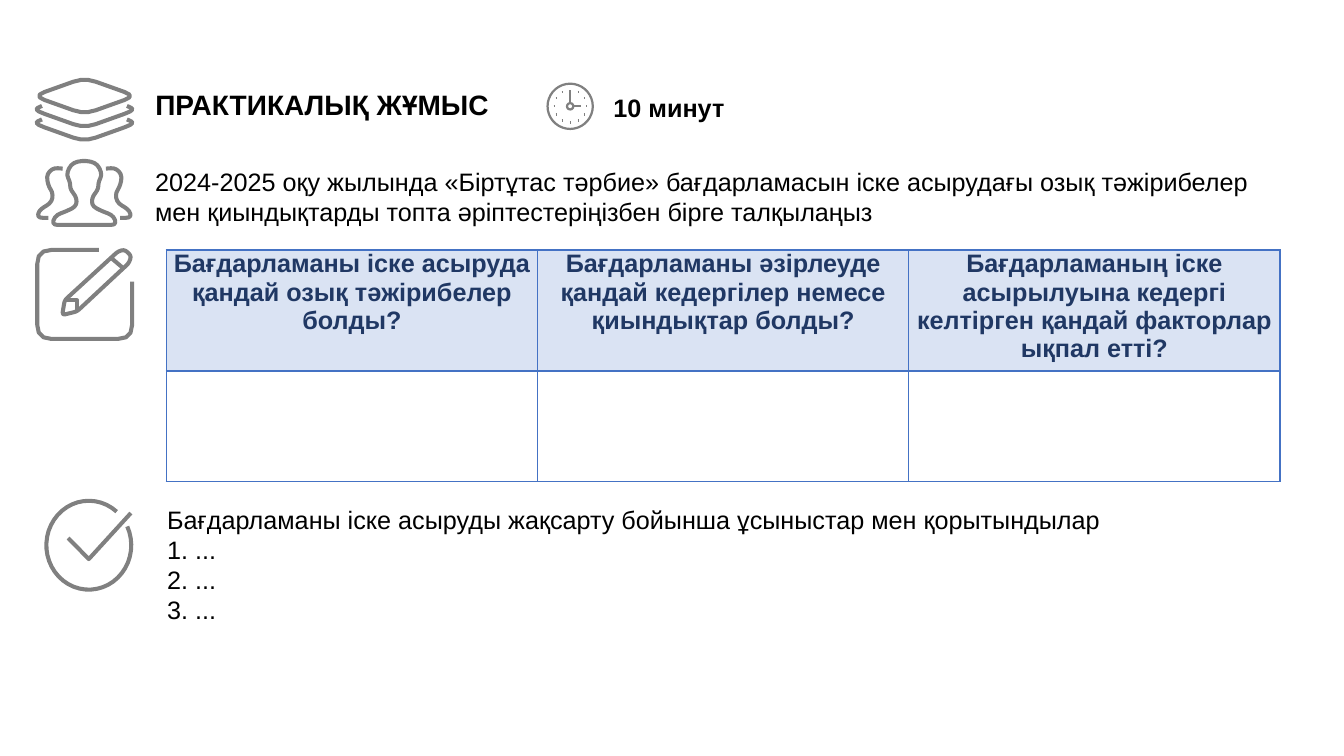
from math import cos, sin, radians
from lxml.etree import SubElement
from pptx import Presentation
from pptx.dml.color import RGBColor
from pptx.enum.text import MSO_ANCHOR, MSO_AUTO_SIZE, PP_ALIGN
from pptx.oxml.ns import qn
from pptx.util import Cm, Pt

GRAY, BLACK, WHITE = "808080", "000000", "FFFFFF"
NAVY, PALE, BLUE = "203864", "DAE3F3", "4472C4"
HEADS = [
    "Бағдарламаны іске асыруда қандай озық тәжірибелер болды?",
    "Бағдарламаны әзірлеуде қандай кедергілер немесе қиындықтар болды?",
    "Бағдарламаның іске асырылуына кедергі келтірген қандай факторлар ықпал етті?",
]


def color(code):
    return RGBColor.from_string(code)


# Text
def style(par, size=18, bold=False, code=BLACK):
    for run in par.runs:
        font = run.font
        font.name, font.size, font.bold = "Arial", Pt(size), bold
        font.color.rgb = color(code)


def write(shape, box, text, size=18, bold=False):
    shape.left, shape.top, shape.width, shape.height = map(Cm, box)
    frame = shape.text_frame
    frame.text = text
    frame.word_wrap = True
    frame.auto_size = MSO_AUTO_SIZE.NONE
    frame.vertical_anchor = MSO_ANCHOR.TOP
    for par in frame.paragraphs:
        par.alignment = PP_ALIGN.LEFT
        par.space_before = Pt(0)
        style(par, size, bold)


def label(slide, box, text, bold=False):
    write(slide.shapes.add_textbox(*map(Cm, box)), box, text, 18, bold)


# Icon strokes
def soften(points, bend, closed):
    """Round each corner with a short quadratic curve."""
    result, last = [], len(points) - 1
    for i, (x, y) in enumerate(points):
        if not bend or (not closed and i in (0, last)):
            result.append((x, y))
            continue
        ends = []
        for px, py in (points[i - 1], points[(i + 1) % len(points)]):
            gap = ((px - x) ** 2 + (py - y) ** 2) ** 0.5
            part = min(bend / gap, 0.5)
            ends.append((x + (px - x) * part, y + (py - y) * part))
        (ax, ay), (bx, by) = ends
        for t in (0, 0.33, 0.67, 1):
            u = 1 - t
            result.append((u * u * ax + 2 * u * t * x + t * t * bx,
                           u * u * ay + 2 * u * t * y + t * t * by))
    return result


def draw(slide, left, top, parts, width=2.9):
    """Draw all parts (points, bend, closed) as one outline."""
    maker = None
    for points, bend, closed in parts:
        dots = [(Cm(left + x), Cm(top + y)) for x, y in soften(points, bend, closed)]
        if maker:
            maker.move_to(*dots[0])
        else:
            maker = slide.shapes.build_freeform(*dots[0])
        maker.add_line_segments(dots[1:], close=closed)
    shape = maker.convert_to_shape()
    shape.shadow.inherit = False
    shape.fill.background()
    shape.line.color.rgb = color(GRAY)
    shape.line.width = Pt(width)


def ring(x, y, wide, high, angles):
    return [(x + wide * cos(radians(a)), y + high * sin(radians(a))) for a in angles]


def flip(points):
    return [(2.47 - x, y) for x, y in points]


# Icons
def layers(slide, left, top):
    sheet = [(-0.05, 0.46), (1.24, 0), (2.53, 0.46), (1.24, 0.92)]
    draw(slide, left, top, [(sheet, 0.3, True)])
    edge = [(0.17, 0.71), (-0.05, 0.81), (1.24, 1.27), (2.53, 0.81), (2.31, 0.71)]
    for drop in (0, 0.34):
        draw(slide, left, top + drop, [(edge, 0.3, False)])


def people(slide, left, top):
    side = [(0.69, 0.26), (0.45, 0.24), (0.28, 0.42), (0.33, 0.7), (0.45, 0.88),
            (0.41, 1.12), (0.1, 1.3), (0.05, 1.5), (0.33, 1.5)]
    half = [(1.23, 0.05), (0.92, 0.12), (0.78, 0.4), (0.88, 0.6), (0.88, 0.78),
            (1.04, 0.98), (1.04, 1.2), (0.82, 1.32), (0.5, 1.44), (0.42, 1.68)]
    draw(slide, left, top, [(side, 0.15, False), (flip(side), 0.15, False),
                            (half + flip(half[:0:-1]), 0.15, True)])


def pencil(slide, left, top):
    frame = [(1.6, 0.05), (0.05, 0.05), (0.05, 2.29), (2.44, 2.29), (2.44, 0.85)]
    body = [(0.68, 1.69), (0.74, 1.32), (2.08, 0.09), (2.25, 0.04),
            (2.42, 0.2), (2.36, 0.38), (1.05, 1.6)]
    band = [(1.9, 0.24), (2.23, 0.52)]
    nib = [(0.74, 1.32), (1.05, 1.32), (1.05, 1.6)]
    draw(slide, left, top, [(frame, 0.35, False), (body, 0.08, True),
                            (band, 0, False), (nib, 0, False)])


def check(slide, left, top):
    tick = [(0.83, 0.99), (1.35, 1.52), (2.41, 0.36)]
    arc = ring(1.35, 1.17, 1.07, 1.12, range(-25, 314, 8))
    draw(slide, left, top, [(arc, 0, False), (tick, 0, False)])


def clock(slide, left, top):
    mid = 0.6
    parts = [(ring(mid, mid, 0.57, 0.57, range(0, 360, 10)), 0, True),
             (ring(mid, mid, 0.08, 0.08, range(0, 360, 30)), 0, True),
             ([(mid, mid - 0.08), (mid, mid - 0.42)], 0, False),
             ([(mid + 0.08, mid), (mid + 0.27, mid)], 0, False)]
    for x, y in ring(mid, mid, 0.41, 0.41, range(-60, 270, 30)):
        parts.append(([(x - 0.01, y), (x + 0.01, y)], 0, False))
    draw(slide, left, top, parts, 1.6)


# Regions
def header(slide, left, top):
    layers(slide, left, top)
    write(slide.shapes.title, (left + 2.77, top + 0.12, 9, 1.12),
          "ПРАКТИКАЛЫҚ ЖҰМЫС", 20, True)
    clock(slide, left + 12.88, top + 0.12)
    label(slide, (left + 14.32, top + 0.25, 17.07, 1.02), "10 минут", True)


def task(slide, left, top):
    people(slide, left, top)
    label(slide, (left + 2.77, top + 0.07, 28.07, 1.8),
          "2024-2025 оқу жылында «Біртұтас тәрбие» бағдарламасын іске асырудағы озық "
          "тәжірибелер мен қиындықтарды топта әріптестеріңізбен бірге талқылаңыз")


def border(cell, sides):
    props = cell._tc.get_or_add_tcPr()
    for i, (side, width) in enumerate(sides.items()):
        line = SubElement(props, qn("a:" + side), w=str(Pt(width)))
        fill = SubElement(line, qn("a:solidFill"))
        SubElement(fill, qn("a:srgbClr"), val=BLUE)
        props.remove(line)
        props.insert(i, line)  # borders stand before the fill


def grid(slide, left, top):
    pencil(slide, left, top)
    box = (left + 3.3, top + 0.05, 28.07, 5.83)
    table = slide.shapes.add_table(2, len(HEADS), *map(Cm, box)).table
    for column in table.columns:
        column.width = Cm(box[2] / len(HEADS))
    for row, height in zip(table.rows, (3.05, 2.78)):
        row.height = Cm(height)
    for i, head in enumerate(HEADS):
        for row, code in enumerate((PALE, WHITE)):
            cell = table.cell(row, i)
            cell.fill.solid()
            cell.fill.fore_color.rgb = color(code)
            cell.margin_left = cell.margin_right = Cm(0.18)
            cell.margin_top = cell.margin_bottom = 0
            border(cell, {"lnL": 1, "lnR": 1, "lnT": 1 + row, "lnB": 2 - row})
        frame = table.cell(0, i).text_frame
        frame.text = head
        frame.paragraphs[0].alignment = PP_ALIGN.CENTER
        style(frame.paragraphs[0], 18, True, NAVY)


def summary(slide, left, top):
    check(slide, left, top)
    body = slide.placeholders[1]
    write(body, (left + 3.07, top, 27.05, 3.33),
          "Бағдарламаны іске асыруды жақсарту бойынша ұсыныстар мен қорытындылар\n"
          "1. ...\n2. ...\n3. ...")
    for par in body.text_frame.paragraphs:
        props = par._p.get_or_add_pPr()
        props.set("marL", "0")
        props.set("indent", "0")
        SubElement(props, qn("a:buNone"))


def main():
    deck = Presentation()
    deck.slide_width, deck.slide_height = Cm(33.87), Cm(19.05)
    slide = deck.slides.add_slide(deck.slide_layouts[1])
    header(slide, 0.89, 1.96)
    task(slide, 0.89, 3.99)
    grid(slide, 0.89, 6.25)
    summary(slide, 0.89, 12.57)
    deck.save("out.pptx")


if __name__ == "__main__":
    main()
